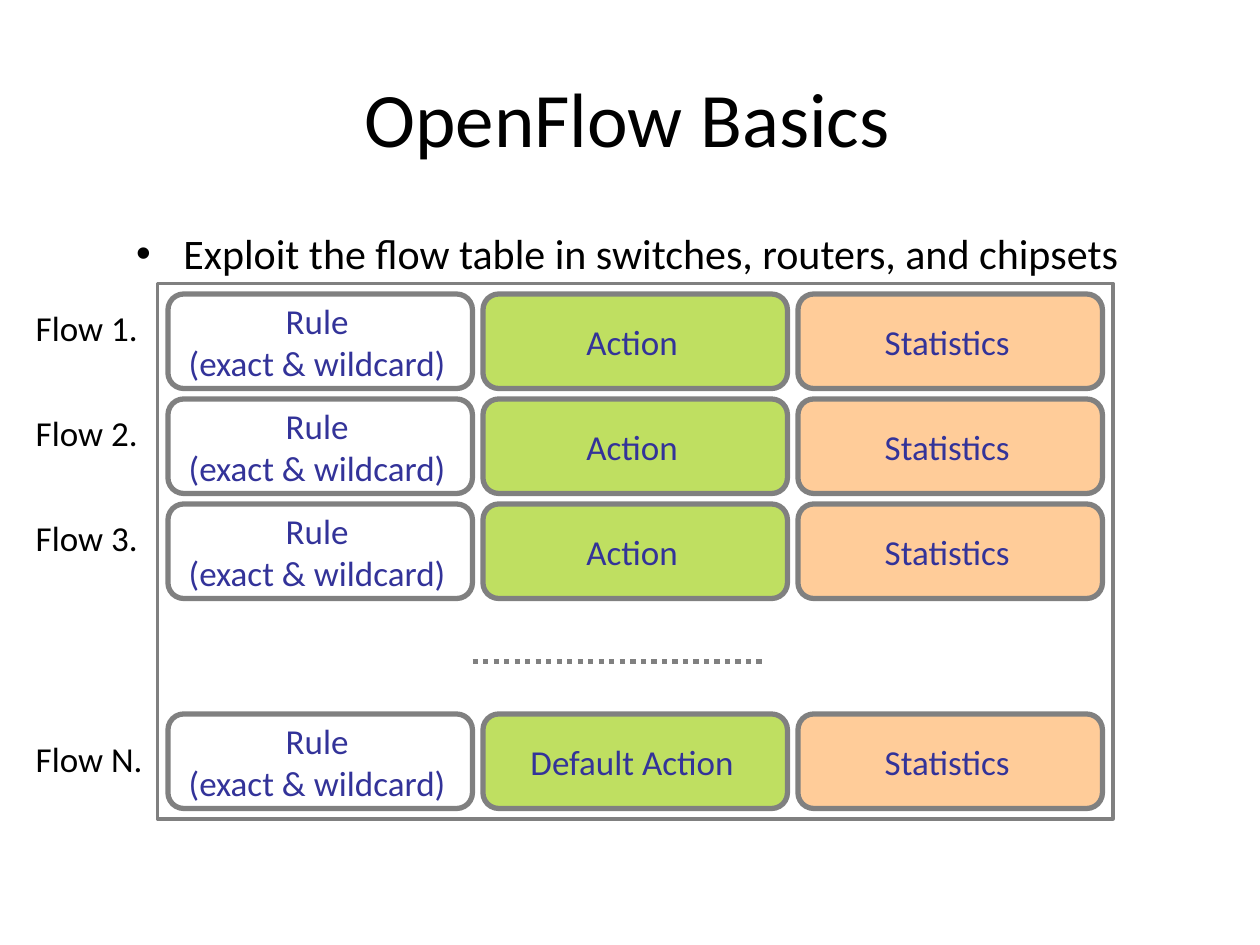
"""Build the OpenFlow Basics slide: a flow table with rules, actions and statistics."""
from dataclasses import dataclass

from lxml import etree
from pptx import Presentation
from pptx import util as u
from pptx.dml.color import RGBColor
from pptx.enum import dml, shapes, text
from pptx.oxml.ns import qn

PX = u.Inches(1) // 120
FONT = "Calibri"
GRAY, INK, BLACK = "808080", "333399", "000000"
LEFT, STEP_X = 160, 300
CELL_W, CELL_H = 290, 90
CENTER = text.PP_ALIGN.CENTER
MIDDLE = text.MSO_ANCHOR.MIDDLE


@dataclass(frozen=True)
class Flow:
    label: str
    top: int
    label_top: int
    action: str = "Action"


@dataclass(frozen=True)
class Column:
    fill: str
    opacity: int = 100


COLUMNS = (Column("FFFFFF"), Column("99CC00", 62), Column("FFCC99"))
FLOWS = (
    Flow("Flow 1.", 280, 292),
    Flow("Flow 2.", 380, 392),
    Flow("Flow 3.", 480, 492),
    Flow("Flow N.", 680, 702, "Default Action"),
)


def px(*lengths: int) -> list[u.Emu]:
    return [u.Emu(length * PX) for length in lengths]


def rgb(value: str) -> RGBColor:
    return RGBColor.from_string(value)


def write(box, content: str, *, size: int, color: str = BLACK, align=None,
          anchor=text.MSO_ANCHOR.TOP, insets=(7, 7, 17, 7), margin: int = 0,
          indent: int = 0, wrap: bool = True) -> None:
    frame = box.text_frame
    frame.text = content
    frame.word_wrap = wrap
    frame.auto_size = text.MSO_AUTO_SIZE.NONE
    frame.vertical_anchor = anchor
    (frame.margin_left, frame.margin_top,
     frame.margin_right, frame.margin_bottom) = px(*insets)
    for para in frame.paragraphs:
        para.alignment = align
        properties = para._p.get_or_add_pPr()
        properties.set("marL", str(margin * PX))
        properties.set("indent", str(indent * PX))
        for span in para.runs:
            span.font.name = FONT
            span.font.size = u.Pt(size)
            span.font.color.rgb = rgb(color)


def place(box, left: int, top: int, width: int, height: int) -> None:
    box.left, box.top, box.width, box.height = px(left, top, width, height)


def outline(line, width: int) -> None:
    line.color.rgb = rgb(GRAY)
    line.width = u.Pt(width)


def draw_cell(page, column: Column, index: int, top: int, content: str) -> None:
    cell = page.shapes.add_shape(
        shapes.MSO_SHAPE.ROUNDED_RECTANGLE,
        *px(LEFT + index * STEP_X, top, CELL_W, CELL_H))
    cell.shadow.inherit = False
    cell.fill.solid()
    cell.fill.fore_color.rgb = rgb(column.fill)
    if column.opacity < 100:
        color = cell._element.spPr.find(qn("a:solidFill"))[0]
        etree.SubElement(color, qn("a:alpha"), val=str(column.opacity * 1000))
    outline(cell.line, 3)
    write(cell, content, size=20, color=INK, align=CENTER, anchor=MIDDLE,
          insets=(5, 5, 12, 5), margin=1, wrap=False)


def draw_flow(page, flow: Flow) -> None:
    contents = ("Rule\n(exact & wildcard)", flow.action, "Statistics")
    for index, (column, content) in enumerate(zip(COLUMNS, contents)):
        draw_cell(page, column, index, flow.top, content)
    label = page.shapes.add_textbox(*px(29, flow.label_top, 116, 41))
    write(label, flow.label, size=20, insets=(0, 0, 5, 0), margin=5, wrap=False)


def draw_frame(page) -> None:
    frame = page.shapes.add_shape(shapes.MSO_SHAPE.RECTANGLE,
                                  *px(150, 270, 910, 510))
    frame.shadow.inherit = False
    frame.fill.background()
    outline(frame.line, 2)


def draw_ellipsis(page) -> None:
    dots = page.shapes.add_connector(shapes.MSO_CONNECTOR.STRAIGHT,
                                     *px(450, 630, 730, 630))
    outline(dots.line, 3)
    dots.line.dash_style = dml.MSO_LINE.ROUND_DOT
    etree.SubElement(dots._element.spPr, qn("a:effectLst"))


def main() -> None:
    deck = Presentation()
    deck.slide_width, deck.slide_height = px(1200, 900)
    page = deck.slides.add_slide(deck.slide_layouts[1])
    title, body = page.placeholders
    place(title, 60, 36, 1080, 150)
    write(title, "OpenFlow Basics", size=44, align=CENTER, anchor=MIDDLE, margin=5)
    place(body, 60, 210, 1080, 594)
    write(body, "Exploit the flow table in switches, routers, and chipsets",
          size=24, align=CENTER, margin=50, indent=-45)
    draw_frame(page)
    for flow in FLOWS:
        draw_flow(page, flow)
    draw_ellipsis(page)
    deck.save("out.pptx")


if __name__ == "__main__":
    main()
